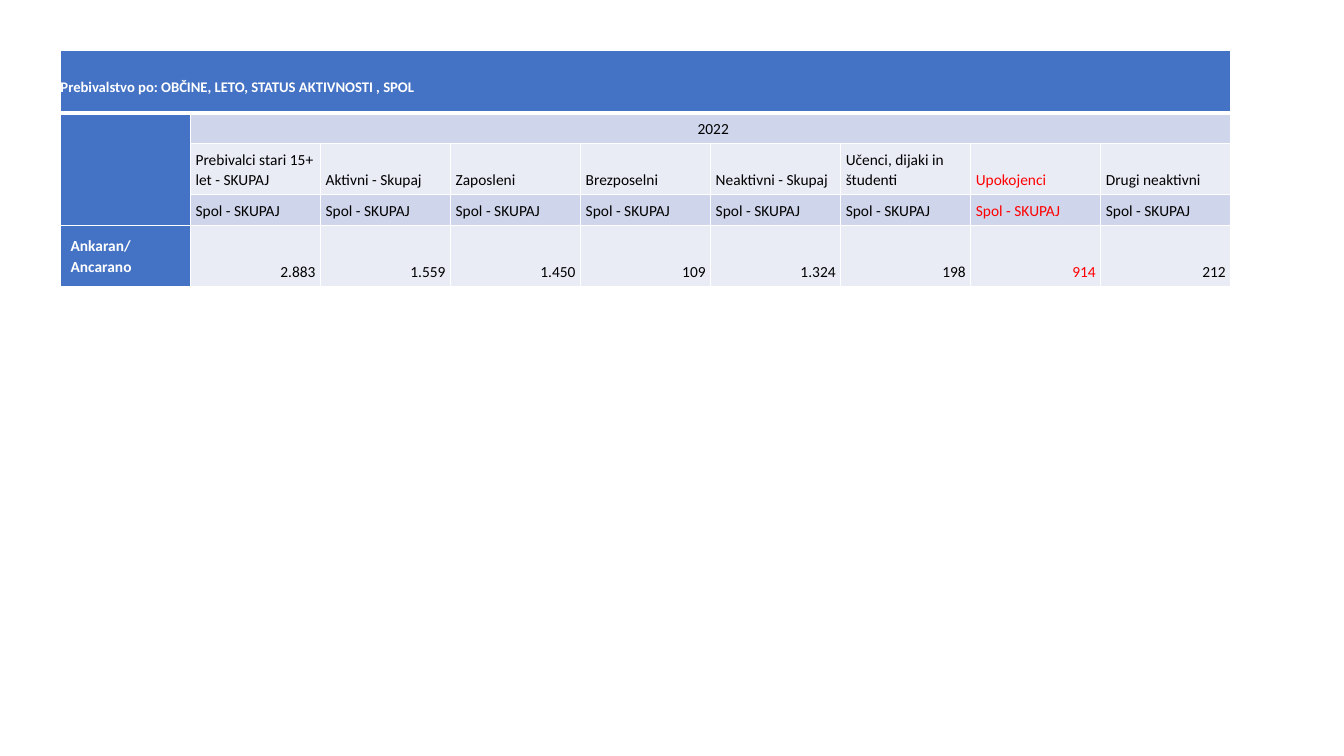
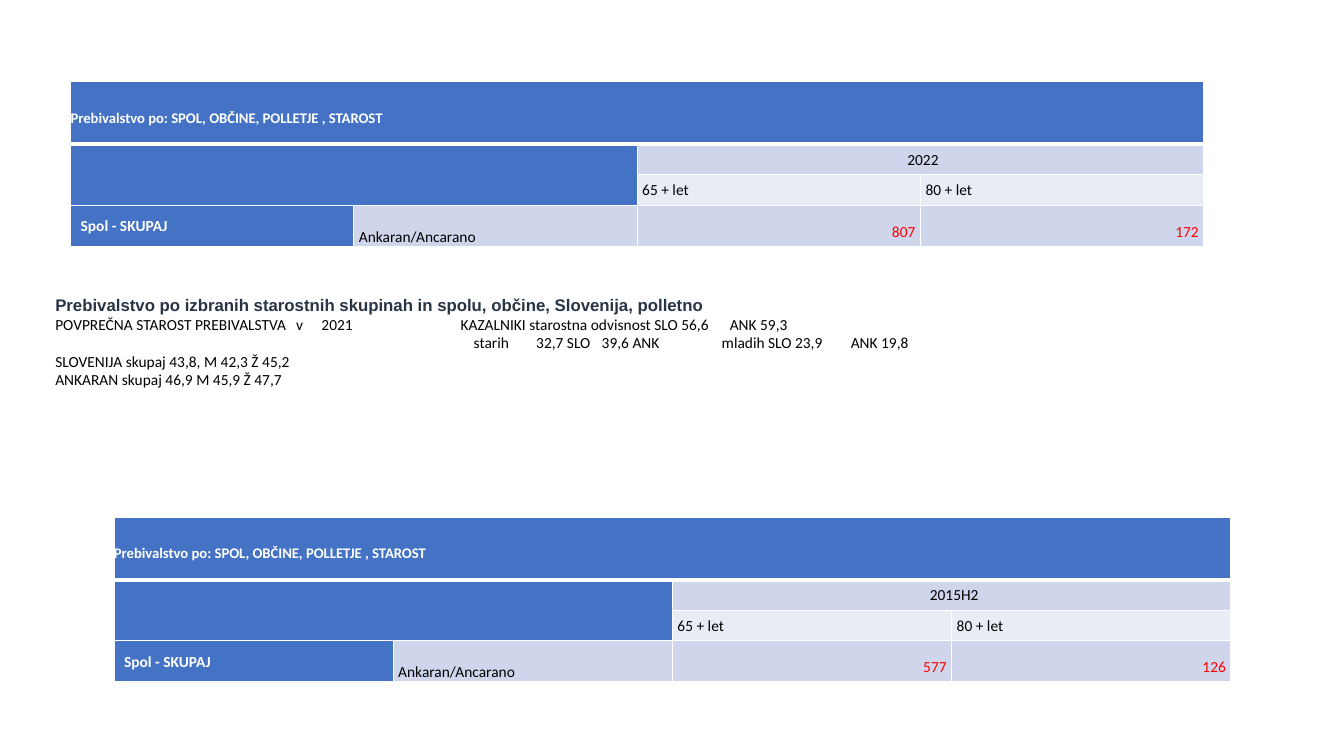
from dataclasses import dataclass

import lxml.etree
import pptx
import pptx.dml.color
import pptx.enum.text
import pptx.oxml.ns
import pptx.util

Inches = pptx.util.Inches
Pt = pptx.util.Pt
Align = pptx.enum.text.PP_ALIGN
Anchor = pptx.enum.text.MSO_ANCHOR
qn = pptx.oxml.ns.qn

BLUE, BAND, PALE = "4472C4", "CFD5EA", "E9EBF5"
WHITE, BLACK, RED, NAVY = "FFFFFF", "000000", "FF0000", "273443"
FONT = "Calibri"


@dataclass(frozen=True)
class Style:
    fill: str
    color: str = BLACK
    bold: bool = False
    size: float = 11
    align: Align = Align.LEFT
    anchor: Anchor = Anchor.BOTTOM
    margins: tuple[float, float, float, float] = (0.05, 0.05, 0.05, 0.05)
    spacing: float | pptx.util.Length = 1.07


@dataclass(frozen=True)
class Cell:
    row: int
    col: int
    text: str
    style: Style
    rows: int = 1
    cols: int = 1
    color: str | None = None


@dataclass(frozen=True)
class Grid:
    left: float
    top: float
    col_width: float
    row_heights: tuple[float, ...]
    cols: int
    cells: list[Cell]


@dataclass(frozen=True)
class Line:
    text: str
    tabs: tuple[float, ...] = ()
    font: str = FONT
    size: float = 11
    color: str = BLACK
    bold: bool = False


TITLE = Style(BLUE, WHITE, True, 10.5, margins=(0, 0.16, 0.05, 0.17), spacing=Pt(21))
CORNER = Style(BLUE, margins=(0, 0, 0, 0))
YEAR = Style(BAND, align=Align.CENTER, margins=(0.1, 0.05, 0.05, 0.05))
HEADING = Style(PALE)
SUBHEADING = Style(BAND)
ROW_LABEL = Style(BLUE, WHITE, True, anchor=Anchor.MIDDLE, margins=(0.1, 0.1, 0.1, 0.1))
PLACE = Style(BAND, margins=(0.05, 0, 0.03, 0))
VALUE = Style(PALE, align=Align.RIGHT)
BAND_VALUE = Style(BAND, align=Align.RIGHT)

ACTIVITY = [
    ("Prebivalci stari 15+ let - SKUPAJ", "2.883"),
    ("Aktivni - Skupaj", "1.559"),
    ("Zaposleni", "1.450"),
    ("Brezposelni", "109"),
    ("Neaktivni - Skupaj", "1.324"),
    ("Učenci, dijaki in študenti", "198"),
    ("Upokojenci", "914"),
    ("Drugi neaktivni", "212"),
]

NOTES = [
    Line("Prebivalstvo po izbranih starostnih skupinah in spolu, občine, Slovenija, polletno",
         font="Arial", size=12, color=NAVY, bold=True),
    Line("POVPREČNA STAROST PREBIVALSTVA\tv\t2021\tKAZALNIKI starostna odvisnost SLO 56,6\tANK 59,3",
         (2.39, 2.64, 4.02, 6.69)),
    Line("\tstarih\t32,7 SLO\t39,6 ANK\tmladih SLO 23,9\tANK 19,8",
         (4.15, 4.77, 5.42, 6.61, 7.89)),
    Line("SLOVENIJA skupaj 43,8, M 42,3 Ž 45,2"),
    Line("ANKARAN skupaj 46,9 M 45,9 Ž 47,7"),
]


def rgb(color: str) -> pptx.dml.color.RGBColor:
    return pptx.dml.color.RGBColor.from_string(color)


def format_runs(p, font: str, size: float, color: str, bold: bool) -> None:
    for r in p.runs:
        r.font.name = font
        r.font.size = Pt(size)
        r.font.bold = bold
        r.font.color.rgb = rgb(color)


def set_borders(cell, row: int) -> None:
    tc_pr = cell._tc.get_or_add_tcPr()
    widths = {"lnL": 1, "lnR": 1, "lnT": 3 if row == 1 else 1, "lnB": 3 if row == 0 else 1}
    for i, (tag, width) in enumerate(widths.items()):
        ln = lxml.etree.Element(qn(f"a:{tag}"), w=str(Pt(width)))
        fill = lxml.etree.SubElement(ln, qn("a:solidFill"))
        lxml.etree.SubElement(fill, qn("a:srgbClr"), val=WHITE)
        tc_pr.insert(i, ln)


def style_cell(cell, style: Style) -> None:
    cell.fill.solid()
    cell.fill.fore_color.rgb = rgb(style.fill)
    cell.vertical_anchor = style.anchor
    cell.margin_left, cell.margin_top, cell.margin_right, cell.margin_bottom = map(
        Inches, style.margins)


def add_grid(s, grid: Grid) -> None:
    heights = grid.row_heights
    table = s.shapes.add_table(
        len(heights), grid.cols, Inches(grid.left), Inches(grid.top),
        Inches(grid.col_width * grid.cols), Inches(sum(heights))).table
    table.first_row = table.horz_banding = False
    for column in table.columns:
        column.width = Inches(grid.col_width)
    for row, height in zip(table.rows, heights):
        row.height = Inches(height)
    for i in range(len(heights)):
        for j in range(grid.cols):
            style_cell(table.cell(i, j), CORNER)
            set_borders(table.cell(i, j), i)
    for item in grid.cells:
        cell = table.cell(item.row, item.col)
        if item.rows * item.cols > 1:
            cell.merge(table.cell(item.row + item.rows - 1, item.col + item.cols - 1))
        style = item.style
        style_cell(cell, style)
        if item.text:
            p = cell.text_frame.paragraphs[0]
            p.text = item.text
            p.alignment = style.align
            p.line_spacing = style.spacing
            p.space_after = Pt(8)
            format_runs(p, FONT, style.size, item.color or style.color, style.bold)


def activity_grid() -> Grid:
    cols = len(ACTIVITY) + 1
    cells = [
        Cell(0, 0, "Prebivalstvo po: OBČINE, LETO, STATUS AKTIVNOSTI , SPOL", TITLE, cols=cols),
        Cell(1, 0, "", CORNER, rows=3),
        Cell(1, 1, "2022", YEAR, cols=cols - 1),
        Cell(4, 0, "Ankaran/Ancarano", ROW_LABEL),
    ]
    for col, (status, count) in enumerate(ACTIVITY, 1):
        color = RED if status == "Upokojenci" else BLACK
        cells += [
            Cell(2, col, status, HEADING, color=color),
            Cell(3, col, "Spol - SKUPAJ", SUBHEADING, color=color),
            Cell(4, col, count, VALUE, color=color),
        ]
    return Grid(0.6, 0.5, 1.29, (0.61, 0.3, 0.51, 0.3, 0.61), cols, cells)


def age_grid(left: float, top: float, col_width: float, period: str,
             over_65: str, over_80: str) -> Grid:
    cells = [
        Cell(0, 0, "Prebivalstvo po: SPOL, OBČINE, POLLETJE , STAROST", TITLE, cols=4),
        Cell(1, 0, "", CORNER, rows=2, cols=2),
        Cell(1, 2, period, YEAR, cols=2),
        Cell(2, 2, "65 + let", HEADING),
        Cell(2, 3, "80 + let", HEADING),
        Cell(3, 0, "Spol - SKUPAJ", ROW_LABEL),
        Cell(3, 1, "Ankaran/Ancarano", PLACE),
        Cell(3, 2, over_65, BAND_VALUE, color=RED),
        Cell(3, 3, over_80, BAND_VALUE, color=RED),
    ]
    return Grid(left, top, col_width, (0.61, 0.3, 0.3, 0.41), 4, cells)


def add_notes(s, lines: list[Line]) -> None:
    sp = s.shapes.add_textbox(Inches(0.45), Inches(2.87), Inches(12.4), Inches(1.04))
    tf = sp.text_frame
    tf.word_wrap = True
    tf.vertical_anchor = Anchor.MIDDLE
    for i, line in enumerate(lines):
        p = tf.add_paragraph() if i else tf.paragraphs[0]
        p.text = line.text
        format_runs(p, line.font, line.size, line.color, line.bold)
        if line.tabs:
            tab_list = lxml.etree.SubElement(p._p.get_or_add_pPr(), qn("a:tabLst"))
            for pos in line.tabs:
                lxml.etree.SubElement(tab_list, qn("a:tab"), pos=str(Inches(pos)), algn="l")


def main() -> None:
    prs = pptx.Presentation()
    prs.slide_width, prs.slide_height = Inches(13.33), Inches(7.5)
    blank = prs.slide_layouts[6]

    s = prs.slides.add_slide(blank)
    add_grid(s, activity_grid())

    s = prs.slides.add_slide(blank)
    add_grid(s, age_grid(1.13, 5.13, 2.77, "2015H2", "577", "126"))
    add_grid(s, age_grid(0.7, 0.81, 2.81, "2022", "807", "172"))
    add_notes(s, NOTES)

    prs.save("out.pptx")


if __name__ == "__main__":
    main()
